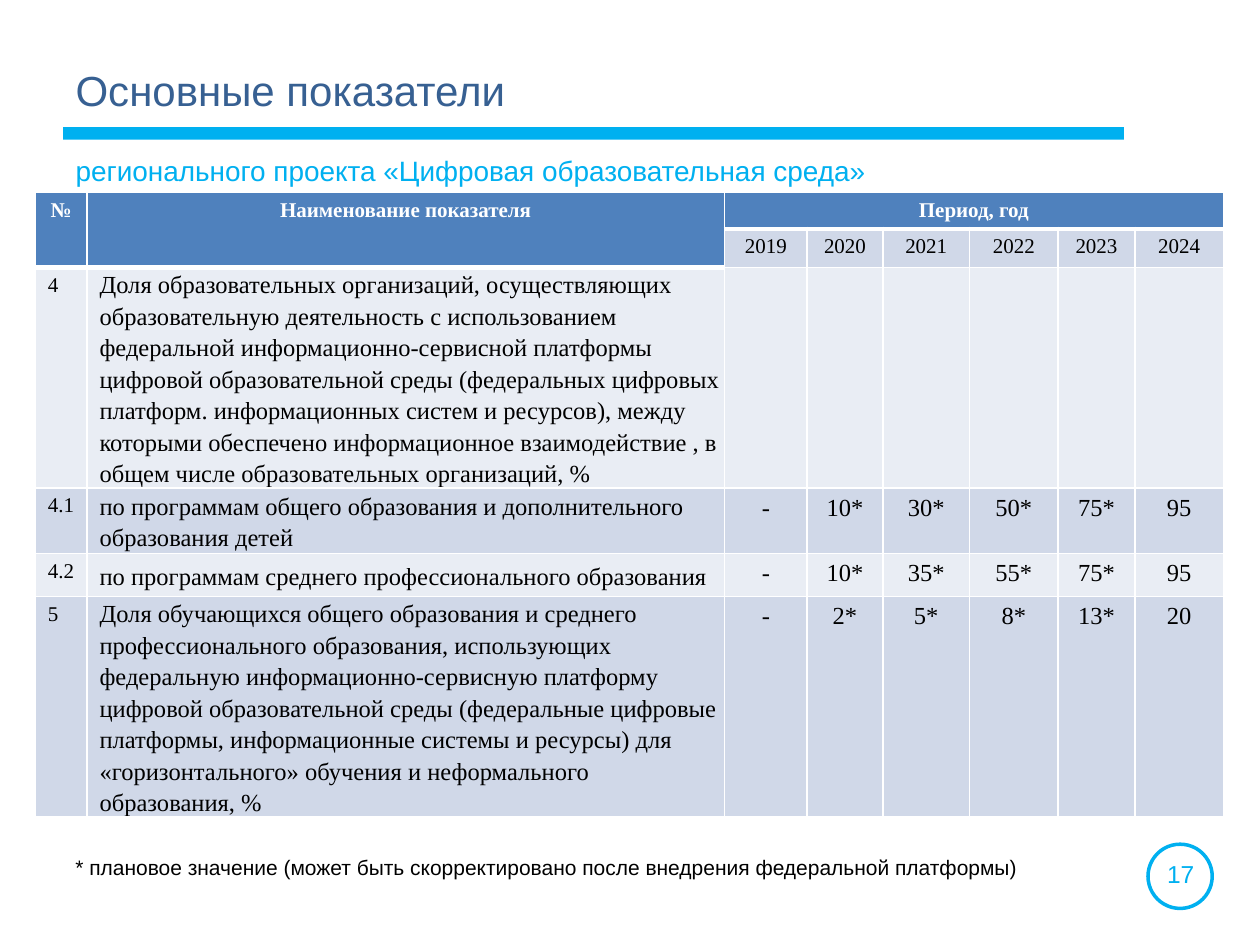
from lxml import etree
from pptx import Presentation
from pptx.dml.color import RGBColor
from pptx.enum.shapes import MSO_SHAPE as Shape
from pptx.enum.text import MSO_ANCHOR as Anchor, MSO_AUTO_SIZE as AutoSize, PP_ALIGN as Align
from pptx.oxml.ns import qn
from pptx.util import Pt

COLORS = {
    "accent": "00B0F0",
    "title": "376092",
    "header": "4F81BD",
    "dark_band": "D0D8E8",
    "light_band": "E9EDF4",
    "white": "FFFFFF",
    "black": "000000",
}
SANS, SERIF = "Arial", "Times New Roman"

COLUMN_WIDTHS = [29.5, 364.3, 47.3, 43.2, 49.7, 50.4, 44.1, 50.4]
ROW_HEIGHTS = [21, 22, 126, 37.5, 24.5, 126]
YEARS = ["2019", "2020", "2021", "2022", "2023", "2024"]
INDICATORS = [
    ("4", "Доля образовательных организаций, осуществляющих образовательную "
          "деятельность с использованием федеральной информационно-сервисной "
          "платформы цифровой образовательной среды (федеральных цифровых "
          "платформ. информационных систем и ресурсов), между которыми "
          "обеспечено информационное взаимодействие , в общем числе "
          "образовательных организаций, %", [""] * 6),
    ("4.1", "по программам общего образования и дополнительного образования детей",
     ["-", "10*", "30*", "50*", "75*", "95"]),
    ("4.2", "по программам среднего профессионального образования",
     ["-", "10*", "35*", "55*", "75*", "95"]),
    ("5", "Доля обучающихся общего образования и среднего профессионального "
          "образования, использующих федеральную информационно-сервисную "
          "платформу цифровой образовательной среды (федеральные цифровые "
          "платформы, информационные системы и ресурсы) для "
          "«горизонтального» обучения и неформального образования, %",
     ["-", "2*", "5*", "8*", "13*", "20"]),
]


def rgb(name):
    return RGBColor.from_string(COLORS[name])


def write_text(frame, text, size=14, font=SANS, color="black", bold=False,
               align=Align.LEFT, line_spacing=None):
    paragraph = frame.paragraphs[0]
    paragraph.alignment = align
    if line_spacing:
        paragraph.line_spacing = Pt(line_spacing)
    if text:
        run = paragraph.add_run()
        run.text = text
        run.font.size = Pt(size)
        run.font.name = font
        run.font.bold = bold
        run.font.color.rgb = rgb(color)
    return paragraph


def place_text(shape, left, top, width, height, text, margin_top=5, **text_format):
    shape.left, shape.top = Pt(left), Pt(top)
    shape.width, shape.height = Pt(width), Pt(height)
    frame = shape.text_frame
    frame.word_wrap = True
    frame.auto_size = AutoSize.NONE
    frame.vertical_anchor = Anchor.TOP
    frame.margin_top = Pt(margin_top)
    return write_text(frame, text, **text_format)


def remove_bullet(paragraph):
    properties = paragraph._p.get_or_add_pPr()
    properties.set("marL", "0")
    properties.set("indent", "0")
    etree.SubElement(properties, qn("a:buNone"))


def add_text_box(slide, *placement, **text_format):
    box = slide.shapes.add_textbox(0, 0, 0, 0)
    return place_text(box, *placement, **text_format)


def add_plain_shape(slide, kind, left, top, width, height, fill=None, line=None):
    shape = slide.shapes.add_shape(kind, Pt(left), Pt(top), Pt(width), Pt(height))
    shape.shadow.inherit = False
    if fill:
        shape.fill.solid()
        shape.fill.fore_color.rgb = rgb(fill)
    else:
        shape.fill.background()
    if line:
        shape.line.color.rgb = rgb(line)
        shape.line.width = Pt(2)
    else:
        shape.line.fill.background()


def style_cell(cell, fill, bottom=1):
    """Fill the cell and give it white borders."""
    properties = cell._tc.get_or_add_tcPr()
    for tag, width in (("lnL", 1), ("lnR", 1), ("lnT", 1), ("lnB", bottom)):
        border = etree.SubElement(properties, qn(f"a:{tag}"), w=str(Pt(width)))
        solid = etree.SubElement(border, qn("a:solidFill"))
        etree.SubElement(solid, qn("a:srgbClr"), val=COLORS["white"])
    cell.fill.solid()
    cell.fill.fore_color.rgb = rgb(fill)


def fill_header(table):
    for column in range(len(COLUMN_WIDTHS)):
        style_cell(table.cell(0, column), "header", bottom=3)
        if column < 2:
            style_cell(table.cell(1, column), "header", bottom=3)
        else:
            style_cell(table.cell(1, column), "dark_band")
    for column in (0, 1):
        table.cell(0, column).merge(table.cell(1, column))
    table.cell(0, 2).merge(table.cell(0, len(COLUMN_WIDTHS) - 1))
    for column, label in enumerate(["№", "Наименование показателя", "Период, год"]):
        write_text(table.cell(0, column).text_frame, label, size=12, font=SERIF,
                   color="white", bold=True, align=Align.CENTER)
    for column, year in enumerate(YEARS, start=2):
        write_text(table.cell(1, column).text_frame, year, size=12, font=SERIF,
                   align=Align.CENTER)


def fill_indicator(table, row, number, name, values):
    band = "dark_band" if row % 2 else "light_band"
    for column in range(len(COLUMN_WIDTHS)):
        style_cell(table.cell(row, column), band)
    write_text(table.cell(row, 0).text_frame, number, size=12, font=SERIF)

    name_cell = table.cell(row, 1)
    name_cell.vertical_anchor = Anchor.MIDDLE
    name_cell.margin_left = name_cell.margin_right = Pt(1.4)
    name_cell.margin_top = name_cell.margin_bottom = 0
    paragraph = write_text(name_cell.text_frame, name, font=SERIF, line_spacing=18)
    paragraph._p.get_or_add_pPr().set("marL", str(Pt(5.8)))

    for column, value in enumerate(values, start=2):
        write_text(table.cell(row, column).text_frame, value, font=SERIF,
                   align=Align.CENTER)


def add_indicator_table(slide):
    frame = slide.shapes.add_table(
        len(ROW_HEIGHTS), len(COLUMN_WIDTHS), Pt(20.2), Pt(109.8),
        Pt(sum(COLUMN_WIDTHS)), Pt(sum(ROW_HEIGHTS)))
    table = frame.table
    table.first_row = table.horz_banding = False
    for column, width in zip(table.columns, COLUMN_WIDTHS):
        column.width = Pt(width)
    for row, height in zip(table.rows, ROW_HEIGHTS):
        row.height = Pt(height)
    fill_header(table)
    for row, indicator in enumerate(INDICATORS, start=2):
        fill_indicator(table, row, *indicator)


def main():
    presentation = Presentation()
    presentation.slide_width, presentation.slide_height = Pt(720), Pt(540)
    slide = presentation.slides.add_slide(presentation.slide_layouts[1])

    add_plain_shape(slide, Shape.RECTANGLE, 36, 72.7, 606.2, 7.2, fill="accent")
    add_plain_shape(slide, Shape.OVAL, 656, 482.4, 36.7, 36.7, line="accent")
    add_text_box(slide, 653.8, 487.4, 41.8, 24.5, "17", color="accent",
                 align=Align.CENTER, margin_top=3.6)

    place_text(slide.shapes.title, 36, 31, 560.9, 46, "Основные показатели",
               margin_top=6, size=24, color="title")
    subtitle = place_text(slide.placeholders[1], 36, 82.8, 616.3, 35.3,
                          "регионального проекта «Цифровая образовательная среда»",
                          size=16, color="accent")
    subtitle.space_before = Pt(0)
    remove_bullet(subtitle)

    add_indicator_table(slide)
    add_text_box(slide, 36, 483.1, 604, 36.7,
                 "* плановое значение (может быть скорректировано после "
                 "внедрения федеральной платформы)", size=12)
    presentation.save("out.pptx")


if __name__ == "__main__":
    main()
